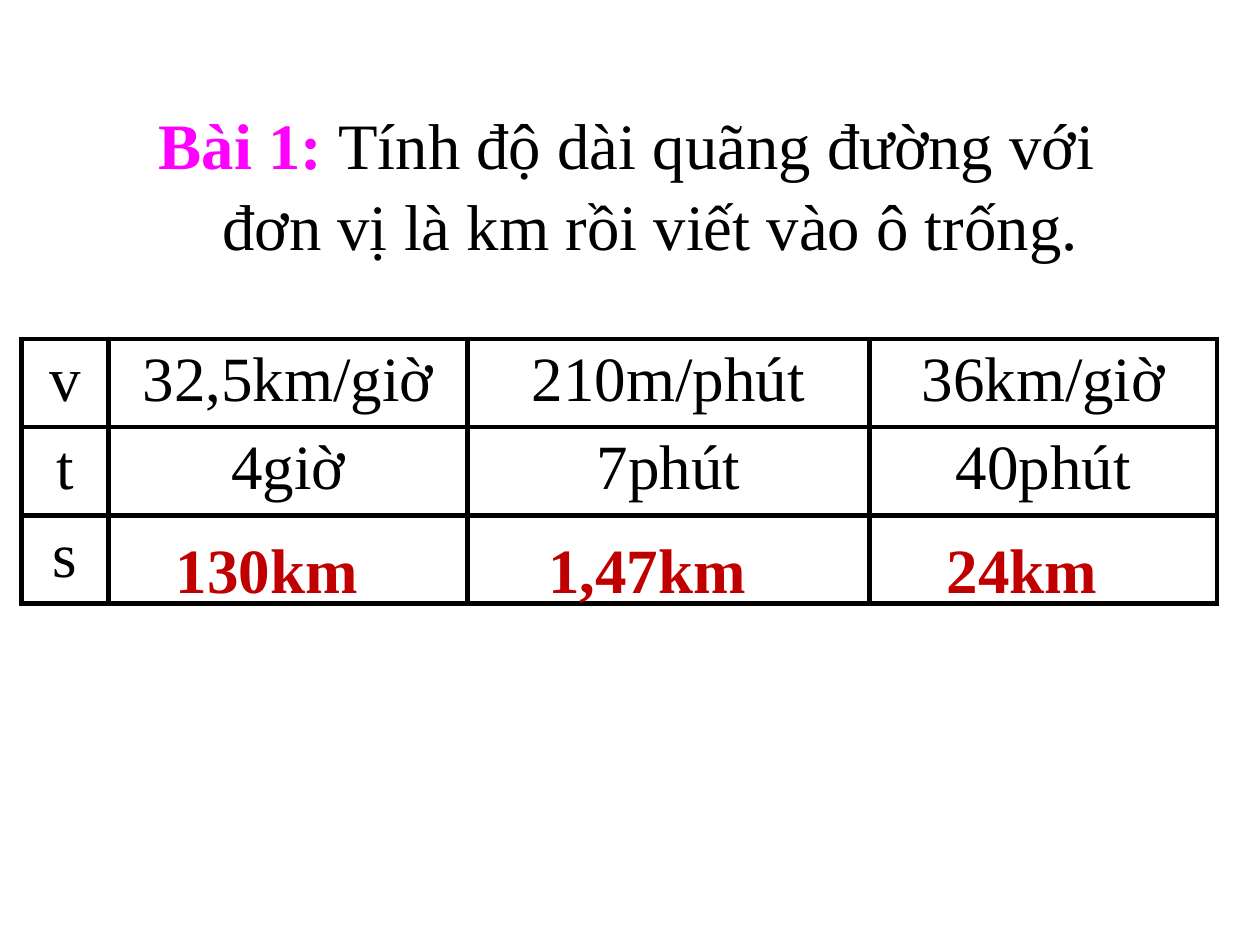
import pptx
import pptx.dml.color
import pptx.enum.text
import pptx.oxml
import pptx.oxml.ns
import pptx.util

Inches = pptx.util.Inches
Pt = pptx.util.Pt
RGBColor = pptx.dml.color.RGBColor
MSO_ANCHOR = pptx.enum.text.MSO_ANCHOR

FONT = "Times New Roman"
BLACK = RGBColor(0x00, 0x00, 0x00)
MAGENTA = RGBColor(0xFF, 0x00, 0xFF)
RED = RGBColor(0xC0, 0x00, 0x00)

TABLE_LEFT, TABLE_TOP = 0.17, 2.69
COLUMN_WIDTHS = [0.69, 2.85, 3.19, 2.76]
ROW_HEIGHT = 0.7
ROWS = [
    ["v", "32,5km/giờ", "210m/phút", "36km/giờ"],
    ["t", "4giờ", "7phút", "40phút"],
    ["s", "", "", ""],
]
ANSWERS = ["130km", "1,47km", "24km"]
ANSWER_LEFT, ANSWER_TOP, ANSWER_HEIGHT = 0.69, 4.11, 0.5


def add_run(p, text, size, color, bold=False):
    p.alignment = pptx.enum.text.PP_ALIGN.CENTER
    r = p.add_run()
    r.text = text
    r.font.name = FONT
    r.font.size = Pt(size)
    r.font.bold = bold
    r.font.color.rgb = color


def set_title(s):
    sp = s.shapes.title
    sp.left, sp.top = Inches(0.76), Inches(0.75)
    sp.width, sp.height = Inches(8.42), Inches(1.25)
    tf = sp.text_frame
    tf.auto_size = pptx.enum.text.MSO_AUTO_SIZE.NONE
    tf.vertical_anchor = MSO_ANCHOR.TOP
    p = tf.paragraphs[0]
    p.line_spacing = 1.05
    add_run(p, "Bài 1: ", 37, MAGENTA, bold=True)
    add_run(p, "Tính độ dài quãng đường với đơn vị là km rồi viết vào ô trống.", 37, BLACK)
    props = p._p.get_or_add_pPr()
    props.set("marL", str(Inches(0.38)))
    props.set("indent", str(Inches(-0.38)))


def set_borders(cell):
    props = cell._tc.get_or_add_tcPr()
    for index, side in enumerate(["lnL", "lnR", "lnT", "lnB"]):
        line = pptx.oxml.parse_xml(
            f'<a:{side} {pptx.oxml.ns.nsdecls("a")} w="{Pt(3)}">'
            f'<a:solidFill><a:srgbClr val="{BLACK}"/></a:solidFill></a:{side}>'
        )
        props.insert(index, line)


def add_motion_table(s):
    frame = s.shapes.add_table(
        len(ROWS), len(COLUMN_WIDTHS), Inches(TABLE_LEFT), Inches(TABLE_TOP),
        Inches(sum(COLUMN_WIDTHS)), Inches(ROW_HEIGHT * len(ROWS)),
    )
    table = frame.table
    table.first_row = table.horz_banding = False
    for column, width in zip(table.columns, COLUMN_WIDTHS):
        column.width = Inches(width)
    for i, texts in enumerate(ROWS):
        table.rows[i].height = Inches(ROW_HEIGHT)
        for j, text in enumerate(texts):
            cell = table.cell(i, j)
            cell.fill.background()
            set_borders(cell)
            if text:
                add_run(cell.text_frame.paragraphs[0], text, 36, BLACK)


def add_answer(s, text, left, width):
    sp = s.shapes.add_textbox(
        Inches(left), Inches(ANSWER_TOP), Inches(width), Inches(ANSWER_HEIGHT)
    )
    tf = sp.text_frame
    tf.word_wrap = True
    tf.vertical_anchor = MSO_ANCHOR.TOP
    tf.margin_top = Inches(0.1)
    add_run(tf.paragraphs[0], text, 36, RED, bold=True)


def main():
    prs = pptx.Presentation()
    prs.slide_width, prs.slide_height = Inches(10), Inches(7.5)
    s = prs.slides.add_slide(prs.slide_layouts[5])
    set_title(s)
    add_motion_table(s)
    left = ANSWER_LEFT
    for text, width in zip(ANSWERS, COLUMN_WIDTHS[1:]):
        add_answer(s, text, left, width)
        left += width
    prs.save("out.pptx")


if __name__ == "__main__":
    main()
